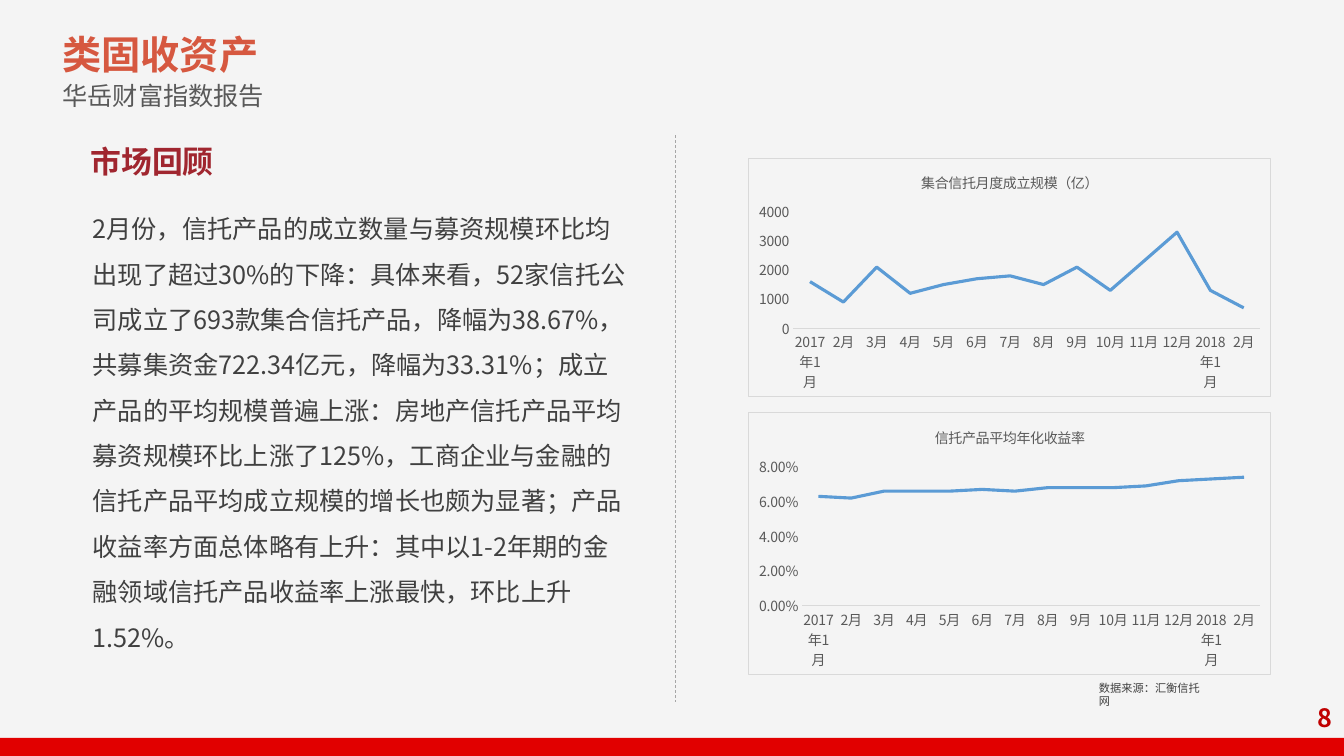
from dataclasses import dataclass

from lxml.etree import SubElement
from pptx import Presentation
from pptx.chart.data import CategoryChartData
from pptx.dml.color import RGBColor as RGB
from pptx.enum.chart import XL_CHART_TYPE as ChartType, XL_TICK_MARK as Tick
from pptx.enum.dml import MSO_LINE as Dash
from pptx.enum.shapes import MSO_CONNECTOR as Connector, MSO_SHAPE as Preset
from pptx.enum.text import MSO_ANCHOR as Anchor, MSO_AUTO_SIZE as AutoSize, PP_ALIGN as Align
from pptx.oxml import parse_xml
from pptx.oxml.ns import nsdecls, qn
from pptx.util import Inches, Pt


@dataclass(frozen=True)
class Theme:
    font: str = "Noto Sans CJK SC"
    background: str = "F4F4F4"
    title: str = "D65840"
    heading: str = "A0262F"
    muted: str = "595959"
    body: str = "404040"
    page: str = "C00000"
    footer: str = "E10000"
    divider: str = "A6A6A6"
    frame: str = "D9D9D9"
    series: str = "5B9BD5"
    title_size: int = 28
    heading_size: int = 22
    body_size: int = 18
    chart_size: int = 10
    source_size: int = 8


THEME = Theme()

TITLE = "类固收资产"
SUBTITLE = "华岳财富指数报告"
HEADING = "市场回顾"
REVIEW = (
    "2月份，信托产品的成立数量与募资规模环比均出现了超过30%的下降：具体来看，"
    "52家信托公司成立了693款集合信托产品，降幅为38.67%，共募集资金722.34亿元，"
    "降幅为33.31%；成立产品的平均规模普遍上涨：房地产信托产品平均募资规模环比上涨了125%，"
    "工商企业与金融的信托产品平均成立规模的增长也颇为显著；产品收益率方面总体略有上升："
    "其中以1-2年期的金融领域信托产品收益率上涨最快，环比上升1.52%。"
)
SOURCE = "数据来源：汇衡信托网"
PAGE = "8"
MONTHS = ["2017年1月", *(f"{month}月" for month in range(2, 13)), "2018年1月", "2月"]
CHARTS = [
    dict(
        title="集合信托月度成立规模（亿）", top=1.57, height=2.37,
        maximum=4000, step=1000, number_format="General",
        values=(1600, 900, 2100, 1200, 1500, 1700, 1800,
                1500, 2100, 1300, 2300, 3300, 1300, 700),
    ),
    dict(
        title="信托产品平均年化收益率", top=4.09, height=2.61,
        maximum=0.08, step=0.02, number_format="0.00%",
        values=(0.063, 0.062, 0.066, 0.066, 0.066, 0.067, 0.066,
                0.068, 0.068, 0.068, 0.069, 0.072, 0.073, 0.074),
    ),
]
CHART_LEFT, CHART_WIDTH = 7.42, 5.19
SLIDE_WIDTH, SLIDE_HEIGHT, FOOTER_HEIGHT = 13.33, 7.5, 0.18


def format_font(font, size, color, bold=False):
    font.size, font.bold = Pt(size), bold
    font.color.rgb = RGB.from_string(color)
    font.name = THEME.font


def set_east_asian_font(element):
    for latin in list(element.iter(qn("a:latin"))):
        latin.addnext(parse_xml(f'<a:ea {nsdecls("a")} typeface="{THEME.font}"/>'))


def write(paragraph, text, *, size, color, bold=False, align=Align.LEFT, spacing=1.0):
    paragraph.alignment, paragraph.line_spacing = align, spacing
    paragraph.space_before = Pt(0)
    run = paragraph.add_run()
    run.text = text
    format_font(run.font, size, color, bold)
    set_east_asian_font(run.font._element)


def prepare_frame(shape, box, anchor=Anchor.TOP):
    """Place a text shape and return its frame, wrapped and of fixed size."""
    shape.left, shape.top, shape.width, shape.height = map(Inches, box)
    frame = shape.text_frame
    frame.word_wrap, frame.auto_size = True, AutoSize.NONE
    frame.vertical_anchor = anchor
    return frame


def add_text(slide, box, text, anchor=Anchor.TOP, **style):
    frame = prepare_frame(slide.shapes.add_textbox(0, 0, 0, 0), box, anchor)
    write(frame.paragraphs[0], text, **style)


def add_line_chart(slide, title, top, height, maximum, step, number_format, values):
    trend = CategoryChartData(number_format=number_format)
    trend.categories = MONTHS
    trend.add_series(title, values)
    chart = slide.shapes.add_chart(
        ChartType.LINE, Inches(CHART_LEFT), Inches(top),
        Inches(CHART_WIDTH), Inches(height), trend).chart
    chart.has_legend = False
    format_font(chart.font, THEME.chart_size, THEME.muted)

    chart.has_title = True
    write(chart.chart_title.text_frame.paragraphs[0], title, size=THEME.chart_size,
          color=THEME.muted, align=Align.CENTER)
    chart.chart_title.include_in_layout = False

    months, scale = chart.category_axis, chart.value_axis
    for axis in (months, scale):
        axis.major_tick_mark = axis.minor_tick_mark = Tick.NONE
        axis.has_major_gridlines = False
        format_font(axis.tick_labels.font, THEME.chart_size, THEME.muted)
    months.format.line.color.rgb = RGB.from_string(THEME.frame)
    months.format.line.width = Pt(0.75)
    scale.format.line.fill.background()
    scale.minimum_scale, scale.maximum_scale, scale.major_unit = 0, maximum, step
    scale.tick_labels.number_format = number_format
    scale.tick_labels.number_format_is_linked = False

    plot = chart.plots[0]
    plot.vary_by_categories = False
    series = plot.series[0]
    series.smooth = False
    series.format.line.color.rgb = RGB.from_string(THEME.series)
    series.format.line.width = Pt(2.25)

    chart.element.find(qn("c:chart")).addnext(parse_xml(
        f'<c:spPr {nsdecls("c", "a")}><a:noFill/><a:ln w="{Pt(0.75)}"><a:solidFill>'
        f'<a:srgbClr val="{THEME.frame}"/></a:solidFill></a:ln></c:spPr>'))
    for latin in chart.element.iter(qn("a:latin")):
        if latin.getnext() is None:
            set_east_asian_font(latin.getparent())


def add_divider(slide):
    divider = slide.shapes.add_connector(
        Connector.STRAIGHT, Inches(6.7), Inches(1.34), Inches(6.7), Inches(6.96))
    divider.line.color.rgb = RGB.from_string(THEME.divider)
    divider.line.width, divider.line.dash_style = Pt(0.5), Dash.DASH
    SubElement(divider.line._get_or_add_ln().getparent(), qn("a:effectLst"))


def add_footer(slide):
    footer = slide.shapes.add_shape(
        Preset.RECTANGLE, 0, Inches(SLIDE_HEIGHT - FOOTER_HEIGHT),
        Inches(SLIDE_WIDTH), Inches(FOOTER_HEIGHT))
    footer.shadow.inherit = False
    footer.fill.solid()
    footer.fill.fore_color.rgb = RGB.from_string(THEME.footer)
    footer.line.fill.background()


def main():
    deck = Presentation()
    deck.slide_width, deck.slide_height = Inches(SLIDE_WIDTH), Inches(SLIDE_HEIGHT)
    slide = deck.slides.add_slide(deck.slide_layouts[5])
    slide.background.fill.solid()
    slide.background.fill.fore_color.rgb = RGB.from_string(THEME.background)

    header = prepare_frame(slide.shapes.title, (0.52, 0.19, 4.47, 0.97))
    write(header.paragraphs[0], TITLE, size=THEME.title_size, color=THEME.title,
          bold=True, spacing=1.12)
    write(header.add_paragraph(), SUBTITLE, size=THEME.body_size, color=THEME.muted,
          spacing=1.12)

    add_footer(slide)
    add_divider(slide)
    add_text(slide, (0.8, 1.37, 9.25, 0.47), HEADING, size=THEME.heading_size,
             color=THEME.heading, bold=True, align=Align.JUSTIFY)
    add_text(slide, (0.82, 1.92, 5.52, 4.19), REVIEW, size=THEME.body_size,
             color=THEME.body, spacing=1.5)
    for chart in CHARTS:
        add_line_chart(slide, **chart)
    add_text(slide, (10.8, 6.71, 1.31, 0.23), SOURCE, size=THEME.source_size,
             color=THEME.body)
    add_text(slide, (12.84, 6.92, 0.47, 0.4), PAGE, anchor=Anchor.MIDDLE,
             size=THEME.body_size, color=THEME.page, bold=True, align=Align.RIGHT)
    deck.save("out.pptx")


if __name__ == "__main__":
    main()
